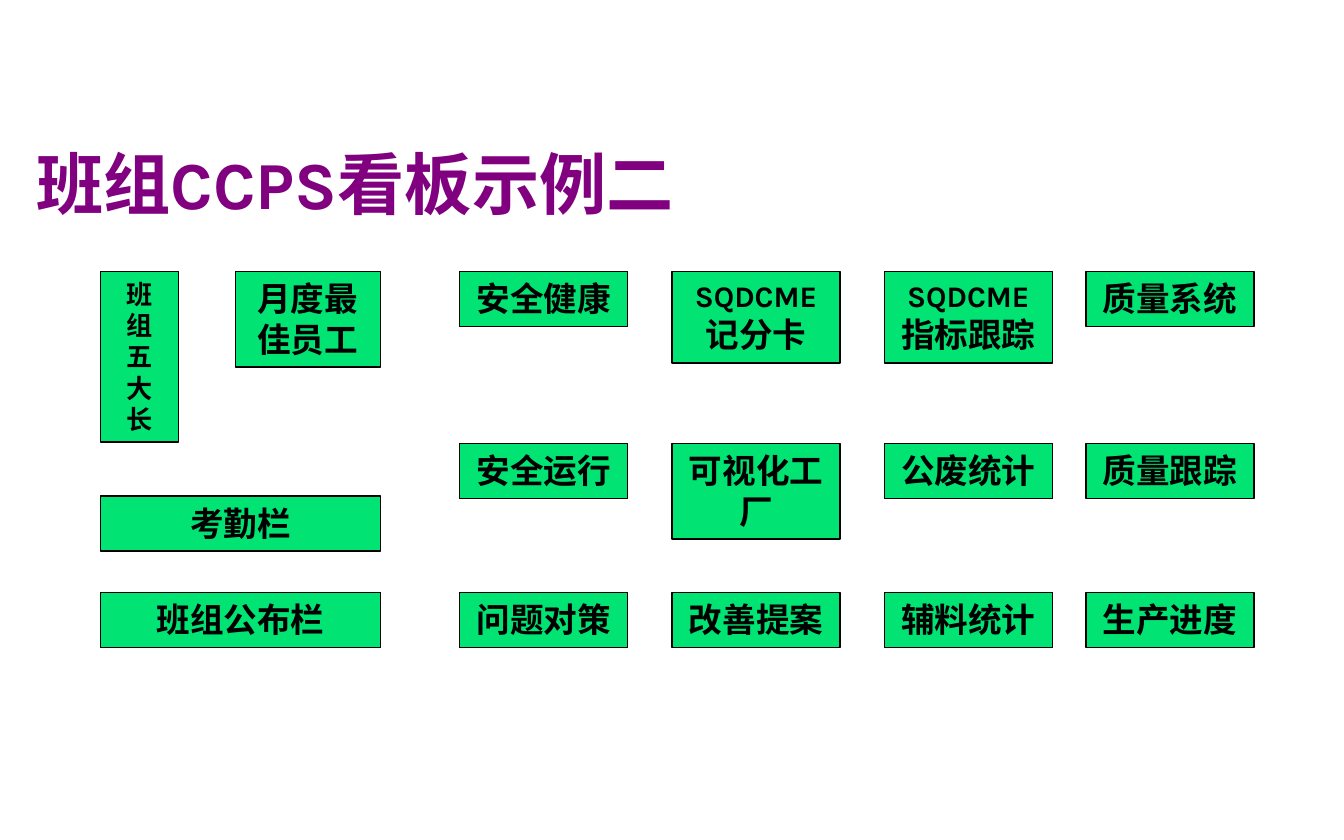
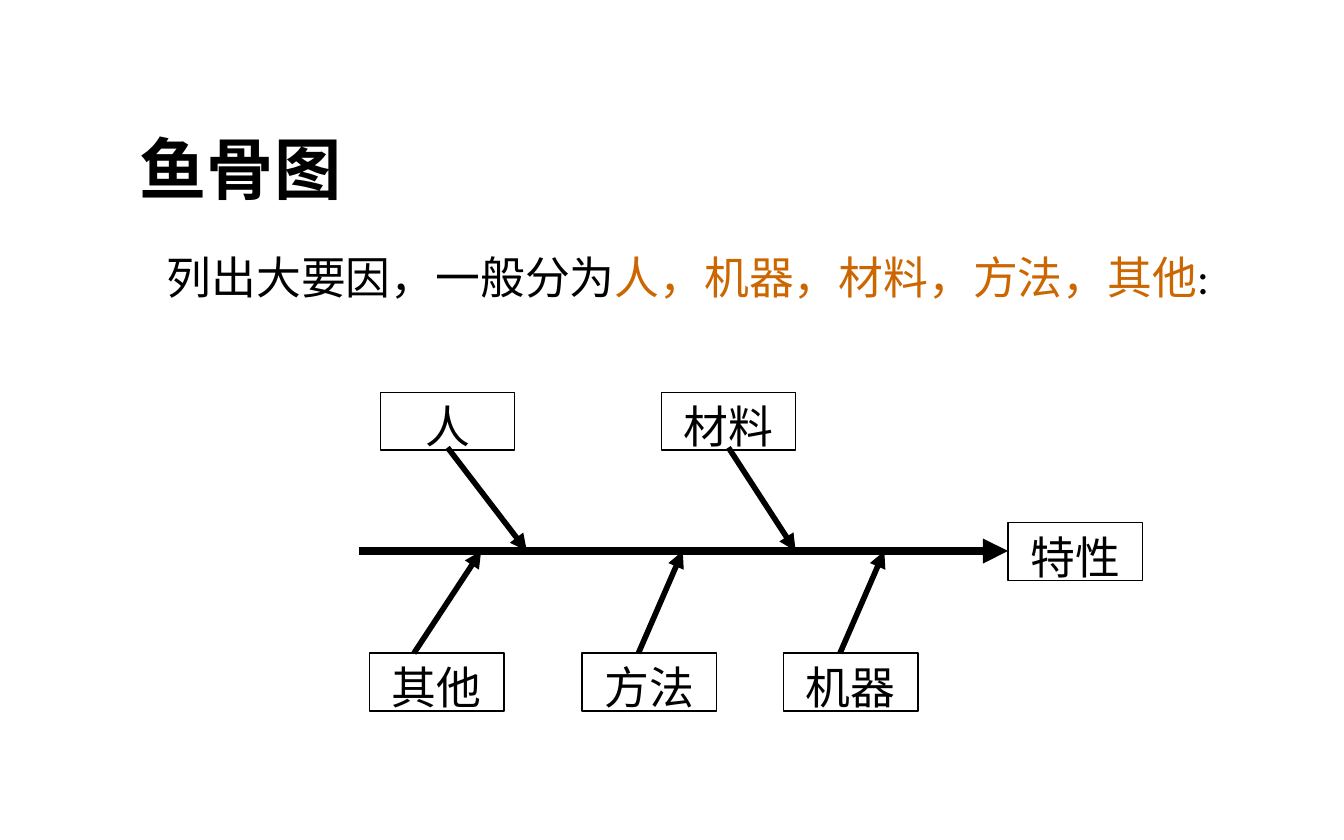
from dataclasses import dataclass
from itertools import product

from lxml import etree
from pptx import Presentation
from pptx.dml.color import RGBColor
from pptx.enum import shapes, text
from pptx.oxml import ns
from pptx.util import Inches, Pt

BLACK = RGBColor(0x00, 0x00, 0x00)
GREEN = RGBColor(0x01, 0xE3, 0x72)
PURPLE = RGBColor(0x80, 0x00, 0x80)
ORANGE = RGBColor(0xCC, 0x66, 0x00)

HEADING_FONT = "Karla"
BODY_FONT = "Calibri"
TITLE_SIZE = 36
CARD_SIZE = 18
LABEL_SIZE = 24


@dataclass(frozen=True)
class Area:
    left: float
    top: float
    width: float
    height: float

    def lengths(self) -> tuple:
        return tuple(Inches(v) for v in (self.left, self.top, self.width, self.height))


@dataclass(frozen=True)
class Run:
    words: str
    size: int
    font: str = HEADING_FONT
    color: RGBColor = BLACK
    bold: bool = False


@dataclass(frozen=True)
class Box:
    area: Area
    runs: tuple
    fill: RGBColor | None = None


@dataclass(frozen=True)
class Cause:
    label: str
    left: float
    bone_start: float
    bone_tip: float
    above: bool


def add_runs(paragraph, runs) -> None:
    for item in runs:
        run = paragraph.add_run()
        run.text = item.words
        run.font.name = item.font
        run.font.size = Pt(item.size)
        run.font.bold = item.bold
        run.font.color.rgb = item.color


def fill_text(shape, runs, alignment, anchor=text.MSO_ANCHOR.TOP):
    """Write one paragraph into a shape of fixed size and return it."""
    frame = shape.text_frame
    frame.word_wrap = True
    frame.auto_size = text.MSO_AUTO_SIZE.NONE
    frame.vertical_anchor = anchor
    paragraph = frame.paragraphs[0]
    paragraph.alignment = alignment
    paragraph.space_before = Pt(0)
    add_runs(paragraph, runs)
    return paragraph


def place(shape, area: Area) -> None:
    shape.left, shape.top, shape.width, shape.height = area.lengths()


def set_title(slide, area: Area, run: Run, alignment, anchor) -> None:
    title = slide.shapes.title
    place(title, area)
    fill_text(title, [run], alignment, anchor)


def add_box(slide, box: Box) -> None:
    shape = slide.shapes.add_shape(shapes.MSO_SHAPE.RECTANGLE, *box.area.lengths())
    shape.shadow.inherit = False
    if box.fill is None:
        shape.fill.background()
    else:
        shape.fill.solid()
        shape.fill.fore_color.rgb = box.fill
    shape.line.color.rgb = BLACK
    shape.line.width = Pt(0.75)
    fill_text(shape, box.runs, text.PP_ALIGN.CENTER)


def add_arrow(slide, start: tuple, end: tuple, width: float) -> None:
    points = [Inches(v) for v in (*start, *end)]
    arrow = slide.shapes.add_connector(shapes.MSO_CONNECTOR.STRAIGHT, *points)
    arrow.line.color.rgb = BLACK
    arrow.line.width = Pt(width)
    properties = arrow.element.spPr
    line = properties.find(ns.qn("a:ln"))
    etree.SubElement(line, ns.qn("a:tailEnd"), type="triangle")
    etree.SubElement(properties, ns.qn("a:effectLst"))


# Team board
ROW_TOPS = (2.02, 3.3, 4.41)
COLUMN_LEFTS = (3.42, 5, 6.58, 8.08)
COLUMN_WIDTH = 1.25
ONE_LINE, MIXED_LINES, TWO_LINES = 0.41, 0.68, 0.71
BOARD_LABELS = (
    "安全健康", "SQDCME 记分卡", "SQDCME 指标跟踪", "质量系统",
    "安全运行", "可视化工厂", "公废统计", "质量跟踪",
    "问题对策", "改善提案", "辅料统计", "生产进度",
)


def card(label: str, area: Area, size: int = CARD_SIZE) -> Box:
    return Box(area, (Run(label, size, bold=True),), GREEN)


def board_card(label: str, left: float, top: float) -> Box:
    acronym, _, name = label.rpartition(" ")
    if acronym:
        runs = (Run(acronym, 16, bold=True), Run(name, CARD_SIZE, bold=True))
        return Box(Area(left, top, COLUMN_WIDTH, MIXED_LINES), runs, GREEN)
    height = TWO_LINES if len(name) > 4 else ONE_LINE
    return card(name, Area(left, top, COLUMN_WIDTH, height))


TEAM_CARDS = (
    card("班组五大长", Area(0.75, ROW_TOPS[0], 0.58, 1.27), 14),
    card("月度最佳员工", Area(1.75, ROW_TOPS[0], 1.08, TWO_LINES)),
    card("考勤栏", Area(0.75, 3.69, 2.08, ONE_LINE)),
    card("班组公布栏", Area(0.75, ROW_TOPS[2], 2.08, ONE_LINE)),
)


def build_board(presentation) -> None:
    slide = presentation.slides.add_slide(presentation.slide_layouts[5])
    set_title(
        slide, Area(0.17, 1.01, 5.33, 0.7),
        Run("班组CCPS看板示例二", TITLE_SIZE, color=PURPLE, bold=True),
        text.PP_ALIGN.LEFT, text.MSO_ANCHOR.TOP,
    )
    for label, (top, left) in zip(BOARD_LABELS, product(ROW_TOPS, COLUMN_LEFTS)):
        add_box(slide, board_card(label, left, top))
    for team_card in TEAM_CARDS:
        add_box(slide, team_card)


# Fishbone diagram
SPINE_Y = 4.1
SPINE_START, SPINE_END = 2.67, 7.5
UPPER_TOP, LOWER_TOP = 2.92, 4.86
UPPER_BONE_START = 3.33
LABEL_WIDTH, LABEL_HEIGHT = 1, 0.43
CAUSES = (
    Cause("人", 2.83, 3.33, 3.92, True),
    Cause("材料", 4.92, 5.42, 5.92, True),
    Cause("其他", 2.75, 3.08, 3.58, False),
    Cause("方法", 4.33, 4.75, 5.08, False),
    Cause("机器", 5.83, 6.25, 6.58, False),
)


def add_label(slide, label: str, left: float, top: float) -> None:
    area = Area(left, top, LABEL_WIDTH, LABEL_HEIGHT)
    add_box(slide, Box(area, (Run(label, LABEL_SIZE),)))


def add_cause(slide, cause: Cause) -> None:
    top = UPPER_TOP if cause.above else LOWER_TOP
    bone_top = UPPER_BONE_START if cause.above else LOWER_TOP
    add_label(slide, cause.label, cause.left, top)
    add_arrow(slide, (cause.bone_start, bone_top), (cause.bone_tip, SPINE_Y), 3)


def add_introduction(slide) -> None:
    body = slide.placeholders[1]
    place(body, Area(0.92, 1.81, 8.2, 3.75))
    body.text_frame.margin_right = 0
    runs = (
        Run("列出大要因，一般分为", LABEL_SIZE, BODY_FONT),
        Run("人，机器，材料，方法，其他", LABEL_SIZE, BODY_FONT, ORANGE),
        Run(":", LABEL_SIZE, BODY_FONT),
    )
    paragraph = fill_text(body, runs, text.PP_ALIGN.LEFT)
    properties = paragraph._p.get_or_add_pPr()
    properties.set("marL", str(Inches(0.22)))
    properties.set("indent", "0")
    etree.SubElement(properties, ns.qn("a:buNone"))


def build_fishbone(presentation) -> None:
    slide = presentation.slides.add_slide(presentation.slide_layouts[1])
    set_title(
        slide, Area(0.75, 1.11, 2.08, 0.49),
        Run("鱼骨图", TITLE_SIZE, BODY_FONT, bold=True),
        text.PP_ALIGN.CENTER, text.MSO_ANCHOR.BOTTOM,
    )
    add_introduction(slide)
    add_label(slide, "特性", SPINE_END, 3.89)
    add_arrow(slide, (SPINE_START, SPINE_Y), (SPINE_END, SPINE_Y), 4.5)
    for cause in CAUSES:
        add_cause(slide, cause)


def main() -> None:
    presentation = Presentation()
    presentation.slide_width = Inches(10)
    presentation.slide_height = Inches(6.25)
    build_board(presentation)
    build_fishbone(presentation)
    presentation.save("out.pptx")


if __name__ == "__main__":
    main()
